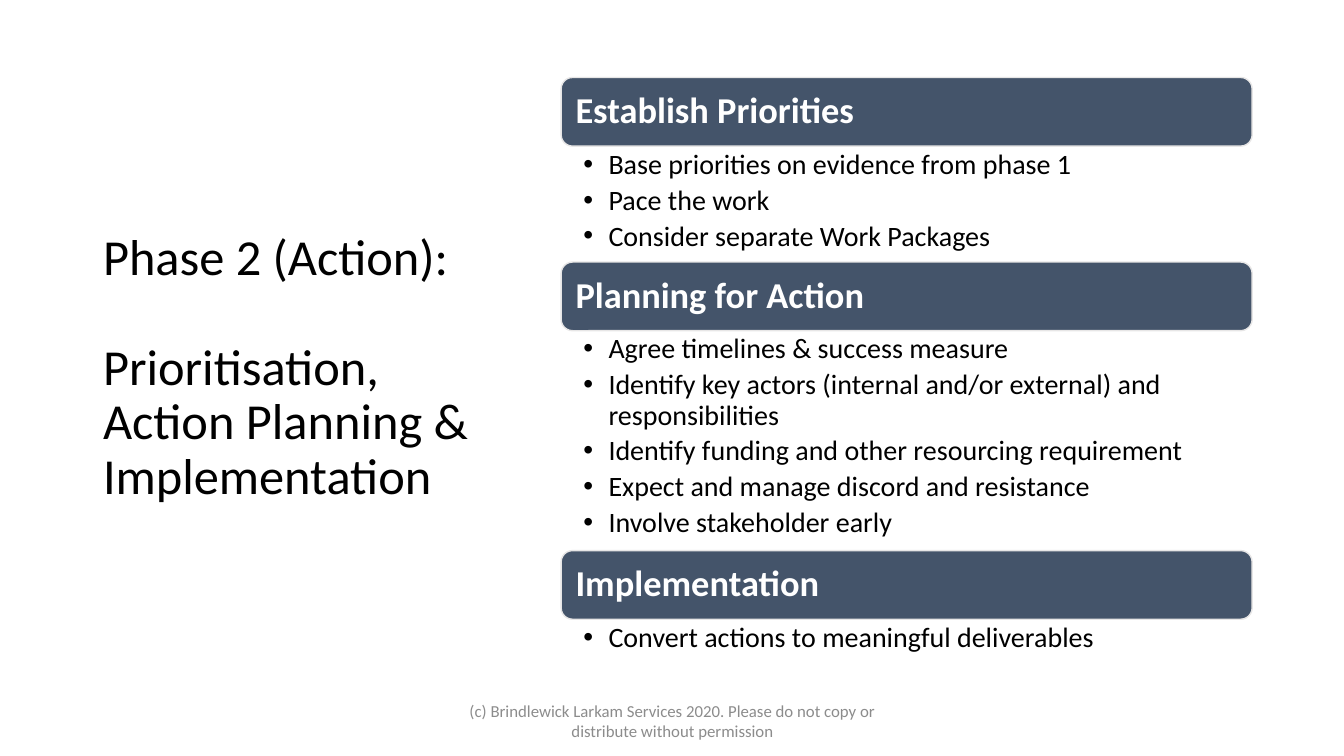
from dataclasses import dataclass

from lxml.etree import SubElement
from pptx import Presentation
from pptx.dml.color import RGBColor
from pptx.enum.shapes import MSO_SHAPE as Preset
from pptx.enum.text import MSO_ANCHOR as Anchor, MSO_AUTO_SIZE as AutoSize, PP_ALIGN as Align
from pptx.oxml.ns import qn
from pptx.util import Inches, Pt


@dataclass(frozen=True)
class Theme:
    font: str = "Calibri"
    ink: RGBColor = RGBColor(0x00, 0x00, 0x00)
    paper: RGBColor = RGBColor(0xFF, 0xFF, 0xFF)
    bar: RGBColor = RGBColor(0x44, 0x54, 0x6A)
    edge: RGBColor = RGBColor(0xE7, 0xE6, 0xE6)
    muted: RGBColor = RGBColor(0x8C, 0x8C, 0x8C)
    title_size: int = 36
    heading_size: int = 26
    list_size: int = 20
    footer_size: int = 12
    line_spacing: float = 0.9


@dataclass(frozen=True)
class Area:
    """A rectangle in columns and rows of the slide grid."""
    column: float
    row: float
    columns: float
    rows: float


@dataclass(frozen=True)
class Section:
    heading: str
    items: tuple[str, ...]
    list_rows: float


THEME = Theme()
SLIDE_WIDTH, SLIDE_HEIGHT = Inches(13.333), Inches(7.5)
COLUMN, ROW = SLIDE_WIDTH / 12, SLIDE_HEIGHT / 12

TITLE_AREA = Area(0.83, 0.98, 3.56, 9.74)
FOOTER_AREA = Area(3.98, 11.12, 4.05, 0.64)
STACK_COLUMN, STACK_COLUMNS, STACK_TOP = 5.01, 6.17, 1.23
BAR_ROWS = 1.09

TITLE = ("Phase 2 (Action):", "Prioritisation, Action Planning & Implementation")
FOOTER = ("(c) Brindlewick Larkam Services 2020. Please do not copy or "
          "distribute without permission")
SECTIONS = (
    Section("Establish Priorities", (
        "Base priorities on evidence from phase 1",
        "Pace the work",
        "Consider separate Work Packages",
    ), 1.84),
    Section("Planning for Action", (
        "Agree timelines & success measure",
        "Identify key actors (internal and/or external) and responsibilities",
        "Identify funding and other resourcing requirement",
        "Expect and manage discord and resistance",
        "Involve stakeholder early",
    ), 3.49),
    Section("Implementation", ("Convert actions to meaningful deliverables",), 0.75),
)


def box(area: Area) -> tuple[int, int, int, int]:
    return (round(area.column * COLUMN), round(area.row * ROW),
            round(area.columns * COLUMN), round(area.rows * ROW))


def place(shape, area: Area) -> None:
    shape.left, shape.top, shape.width, shape.height = box(area)


def set_frame(frame, anchor, left=0.1, top=0.05, right=0.1, bottom=0.05) -> None:
    frame.word_wrap = True
    frame.auto_size = AutoSize.NONE
    frame.vertical_anchor = anchor
    frame.margin_left, frame.margin_top = Inches(left), Inches(top)
    frame.margin_right, frame.margin_bottom = Inches(right), Inches(bottom)


def add_bullet(paragraph) -> None:
    properties = paragraph._p.get_or_add_pPr()
    properties.set("marL", str(Inches(0.25)))
    properties.set("indent", str(-Inches(0.25)))
    SubElement(properties, qn("a:buFont"), typeface="Arial")
    SubElement(properties, qn("a:buChar"), char="•")


def write(frame, lines, size: int, color: RGBColor, bold=False, align=Align.LEFT,
          spacing=THEME.line_spacing, gap: float = 0, bulleted=False) -> None:
    frame.text = "\n".join(lines)
    for paragraph in frame.paragraphs:
        paragraph.alignment = align
        paragraph.line_spacing = spacing
        paragraph.space_before = Pt(0)
        paragraph.space_after = Pt(gap)
        if bulleted:
            paragraph.level = 1
            add_bullet(paragraph)
        font = paragraph.font
        font.name, font.size, font.bold = THEME.font, Pt(size), bold
        font.color.rgb = color


def draw_bar(slide, heading: str, area: Area) -> None:
    bar = slide.shapes.add_shape(Preset.ROUNDED_RECTANGLE, *box(area))
    bar.shadow.inherit = False
    bar.fill.solid()
    bar.fill.fore_color.rgb = THEME.bar
    bar.line.color.rgb = THEME.edge
    bar.line.width = Pt(1)
    set_frame(bar.text_frame, Anchor.MIDDLE, 0.11, 0.11, 0.11, 0.11)
    write(bar.text_frame, [heading], THEME.heading_size, THEME.paper, bold=True)


def fill_list(placeholder, items: tuple[str, ...], area: Area) -> None:
    place(placeholder, area)
    set_frame(placeholder.text_frame, Anchor.TOP, 0.22, 0.04, 0.2, 0.04)
    write(placeholder.text_frame, items, THEME.list_size, THEME.ink,
          gap=0.2 * THEME.list_size, bulleted=True)


def main() -> None:
    presentation = Presentation()
    presentation.slide_width, presentation.slide_height = SLIDE_WIDTH, SLIDE_HEIGHT
    slide = presentation.slides.add_slide(presentation.slide_layouts.get_by_name("Comparison"))
    title, *bodies = slide.placeholders

    # Title: the gap between its two parts is one line high
    place(title, TITLE_AREA)
    set_frame(title.text_frame, Anchor.MIDDLE)
    write(title.text_frame, TITLE, THEME.title_size, THEME.ink)
    title.text_frame.paragraphs[0].space_after = Pt(1.1 * THEME.title_size)

    # Stack of heading bars, each with its list below
    row = STACK_TOP
    for section, body in zip(SECTIONS, bodies):
        draw_bar(slide, section.heading, Area(STACK_COLUMN, row, STACK_COLUMNS, BAR_ROWS))
        row += BAR_ROWS
        fill_list(body, section.items,
                  Area(STACK_COLUMN, row, STACK_COLUMNS, section.list_rows))
        row += section.list_rows

    # Unused placeholders
    for body in bodies[len(SECTIONS):]:
        body.element.getparent().remove(body.element)

    # Footer
    footer = slide.shapes.add_textbox(*box(FOOTER_AREA))
    set_frame(footer.text_frame, Anchor.MIDDLE)
    write(footer.text_frame, [FOOTER], THEME.footer_size, THEME.muted,
          align=Align.CENTER, spacing=1.0)

    presentation.save("out.pptx")


if __name__ == "__main__":
    main()
